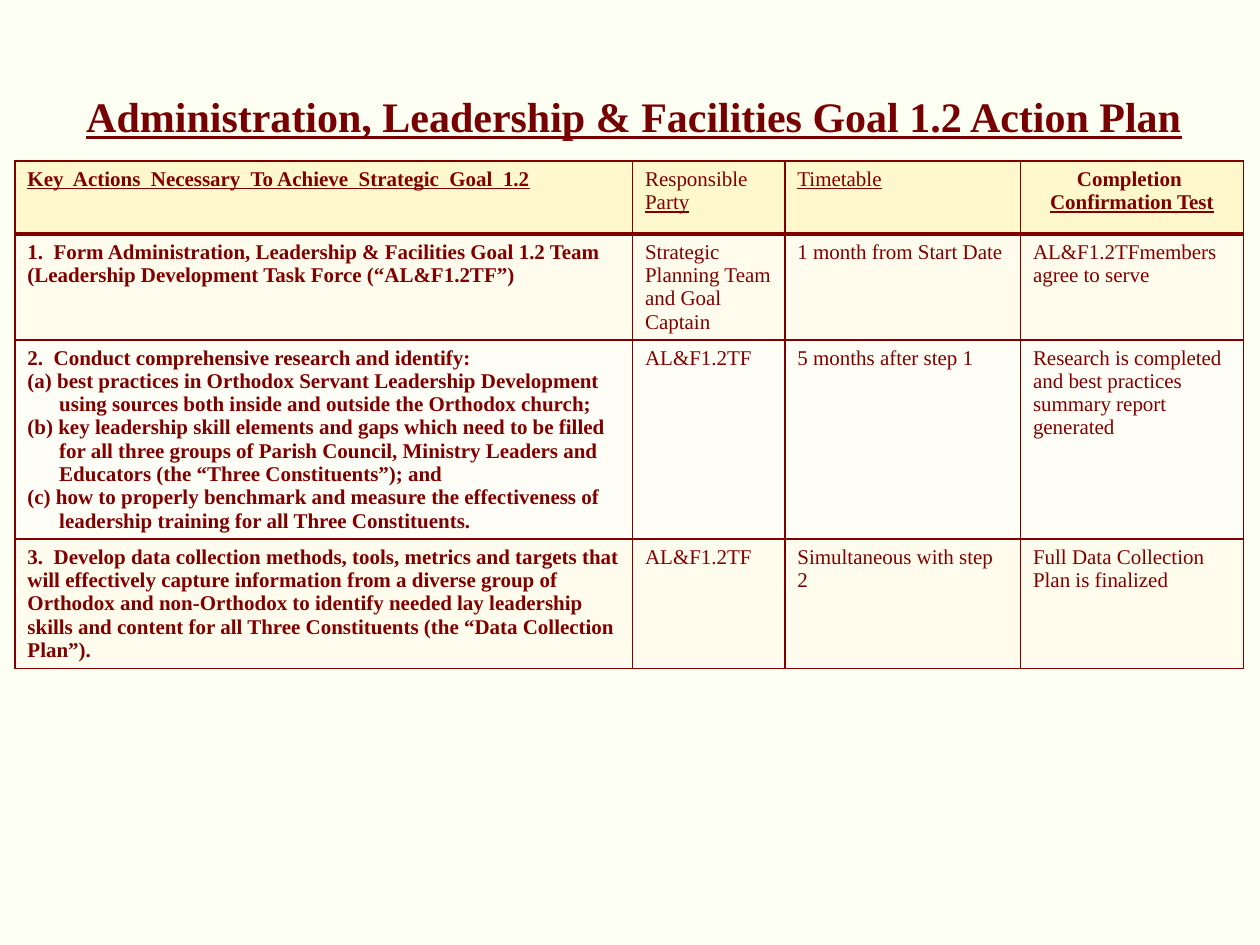
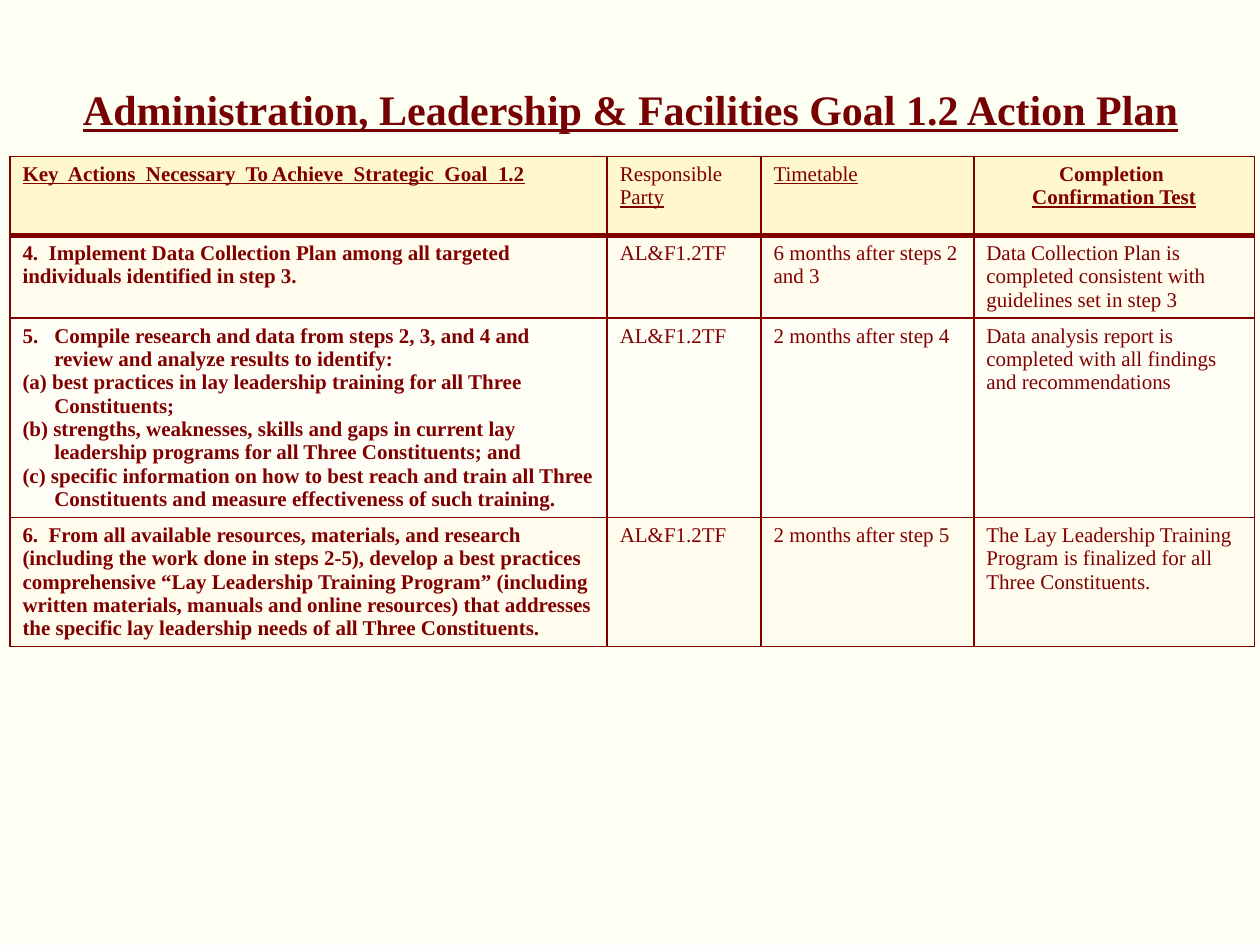
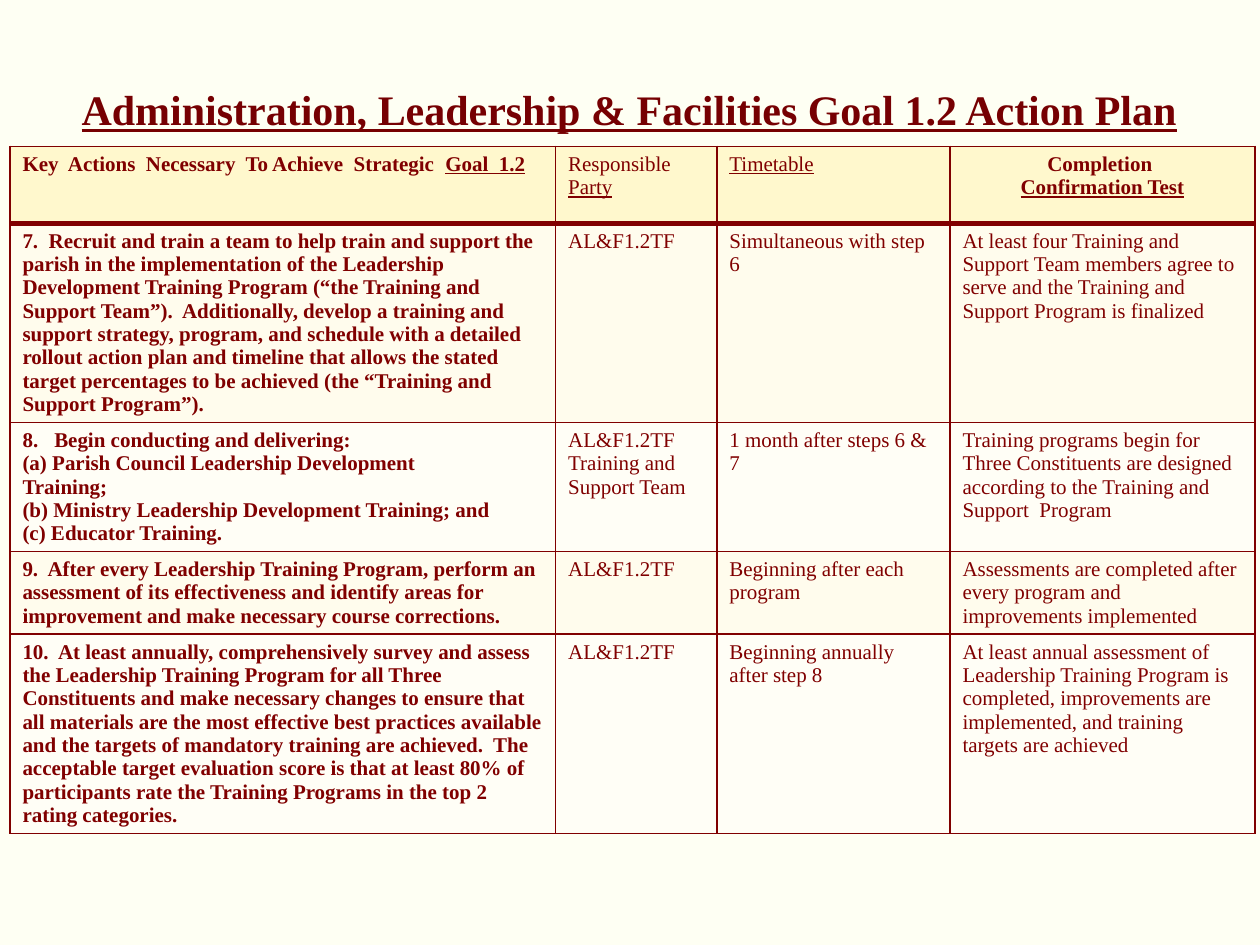
from dataclasses import dataclass

from lxml import etree
from pptx import Presentation
from pptx.dml.color import RGBColor
from pptx.enum import text
from pptx.oxml import ns
from pptx.util import Cm, Pt


@dataclass(frozen=True)
class Theme:
    font: str = "Times New Roman"
    background: str = "FEFFF3"
    title: str = "760002"
    ink: str = "800000"
    header: str = "FFF8CD"
    bands: tuple = ("FFFCED", "FFFEF6")
    title_size: int = 24
    body_size: int = 12
    rule: int = 1
    header_rule: int = 3


@dataclass(frozen=True)
class Para:
    text: str
    hanging: bool = False
    number: int = 0
    tab: bool = False


@dataclass(frozen=True)
class Plan:
    title_box: tuple
    table_at: tuple
    columns: tuple
    header_height: float
    key_header: str
    steps: tuple


THEME = Theme()
TITLE = "Administration, Leadership & Facilities Goal 1.2 Action Plan"
KEY_HEADER = "_Key  Actions  Necessary  To Achieve  Strategic  Goal  1.2_"
SHARED_HEADERS = (
    "Responsible _Party_",
    "_Timetable_",
    (Para("Completion "), Para("_Confirmation Test_")),
)
TEAM = "AL&F1.2TF"
ROW_HEIGHT = 1.45
INDENT = Cm(0.64)

PLANS = (
    Plan(
        (1.07, 1.68, 23.42, 1.57), (0.3, 3.25), (12.45, 3.07, 4.75, 4.5), 1.47, KEY_HEADER,
        (
            ("1.  Form Administration, Leadership & Facilities Goal 1.2 Team (Leadership "
             "Development Task Force (“AL&F1.2TF”)",
             "Strategic Planning Team and Goal Captain",
             "1 month from Start Date",
             "AL&F1.2TFmembers agree to serve"),
            ((Para("2.  Conduct comprehensive research and identify:", hanging=True),
              Para("(a) best practices in Orthodox Servant Leadership Development using sources "
                   "both inside and outside the Orthodox church;", hanging=True),
              Para("(b) key leadership skill elements and gaps which need to be filled for all "
                   "three groups of Parish Council, Ministry Leaders and Educators (the “Three "
                   "Constituents”); and", hanging=True),
              Para("(c) how to properly benchmark and measure the effectiveness of leadership "
                   "training for all Three Constituents.", hanging=True)),
             TEAM,
             "5 months after step 1",
             "Research is completed and best practices summary report generated"),
            ("3.  Develop data collection methods, tools, metrics and targets that will "
             "effectively capture information from a diverse group of Orthodox and non-Orthodox "
             "to identify needed lay leadership skills and content for all Three Constituents "
             "(the “Data Collection Plan”).",
             TEAM,
             "Simultaneous with step 2",
             "Full Data Collection Plan is finalized"),
        ),
    ),
    Plan(
        (1.17, 1.47, 23.09, 1.7), (0.2, 3.15), (12.04, 3.1, 4.29, 5.66), 1.6, KEY_HEADER,
        (
            ("4.  Implement Data Collection Plan among all targeted individuals identified in "
             "step 3.",
             TEAM,
             "6 months after steps 2 and 3",
             "Data Collection Plan is completed consistent with guidelines set in step 3"),
            ((Para("Compile research and data from steps 2, 3, and 4 and review and analyze "
                   "results to identify:", hanging=True, number=5),
              Para("(a) best practices in lay leadership training for all Three Constituents;",
                   hanging=True),
              Para("(b) strengths, weaknesses, skills and gaps in current lay leadership programs "
                   "for all Three Constituents; and", hanging=True),
              Para("(c) specific information on how to best reach and train all Three "
                   "Constituents and measure effectiveness of such training.", hanging=True)),
             TEAM,
             "2 months after step 4",
             "Data analysis report is completed with all findings and recommendations"),
            ("6.  From all available resources, materials, and research (including the work done "
             "in steps 2-5), develop a best practices comprehensive “Lay Leadership Training "
             "Program” (including written materials, manuals and online resources) that "
             "addresses the specific lay leadership needs of all Three Constituents.",
             TEAM,
             "2 months after step 5",
             "The Lay Leadership Training Program is finalized for all Three Constituents."),
        ),
    ),
    Plan(
        (1.14, 1.47, 23.09, 1.7), (0.2, 2.95), (11.0, 3.25, 4.7, 6.15), 1.55,
        "Key  Actions  Necessary  To Achieve  Strategic  _Goal  1.2_",
        (
            ("7.  Recruit and train a team to help train and support the parish in the "
             "implementation of the Leadership Development Training Program (“the Training and "
             "Support Team”).  Additionally, develop a training and support strategy, program, "
             "and schedule with a detailed rollout action plan and timeline that allows the "
             "stated target percentages to be achieved (the “Training and Support Program”).",
             TEAM,
             "Simultaneous with step 6",
             "At least four Training and Support Team members agree to serve and the Training "
             "and Support Program is finalized"),
            ((Para("Begin conducting and delivering:", hanging=True, number=8),
              Para("(a) Parish Council Leadership Development \tTraining;", tab=True),
              Para("(b) Ministry Leadership Development Training; and"),
              Para("(c) Educator Training.")),
             "AL&F1.2TF Training and Support Team",
             "1 month after steps 6 & 7",
             "Training programs begin for Three Constituents are designed according to the "
             "Training and Support  Program"),
            ("9.  After every Leadership Training Program, perform an assessment of its "
             "effectiveness and identify areas for improvement and make necessary course "
             "corrections.",
             TEAM,
             "Beginning after each program",
             "Assessments are completed after every program and improvements implemented"),
            ("10.  At least annually, comprehensively survey and assess the Leadership Training "
             "Program for all Three Constituents and make necessary changes to ensure that all "
             "materials are the most effective best practices available and the targets of "
             "mandatory training are achieved.  The acceptable target evaluation score is that "
             "at least 80% of participants rate the Training Programs in the top 2 rating "
             "categories.",
             TEAM,
             "Beginning annually after step 8",
             "At least annual assessment of Leadership Training Program is completed, "
             "improvements are implemented, and training targets are achieved"),
        ),
    ),
)


def rgb(value):
    return RGBColor.from_string(value)


def add_xml(parent, tag, **attributes):
    values = {name: str(value) for name, value in attributes.items()}
    return etree.SubElement(parent, ns.qn(tag), values)


def format_run(r, size, color, bold, underline):
    r.font.name = THEME.font
    r.font.size = Pt(size)
    r.font.bold = bold
    r.font.underline = underline
    r.font.color.rgb = rgb(color)


def add_title(slide, box):
    sp = slide.shapes.title
    sp.left, sp.top, sp.width, sp.height = map(Cm, box)
    tf = sp.text_frame
    tf.text = TITLE
    tf.word_wrap = True
    tf.auto_size = text.MSO_AUTO_SIZE.NONE
    tf.vertical_anchor = text.MSO_ANCHOR.MIDDLE
    p = tf.paragraphs[0]
    p.alignment = text.PP_ALIGN.CENTER
    p.line_spacing = 0.7
    format_run(p.runs[0], THEME.title_size, THEME.title, True, True)


def set_layout(p, para):
    pPr = p._p.get_or_add_pPr()
    if para.hanging:
        pPr.set("marL", str(INDENT))
        pPr.set("indent", str(-INDENT))
    if para.number:
        add_xml(pPr, "a:buFont", typeface="+mj-lt")
        add_xml(pPr, "a:buAutoNum", type="arabicPeriod", startAt=para.number)
    if para.tab:
        add_xml(add_xml(pPr, "a:tabLst"), "a:tab", pos=INDENT, algn="l")


def write_cell(cell, content, bold, centred):
    paras = (Para(content),) if isinstance(content, str) else content
    tf = cell.text_frame
    for i, para in enumerate(paras):
        p = tf.add_paragraph() if i else tf.paragraphs[0]
        set_layout(p, para)
        if centred:
            p.alignment = text.PP_ALIGN.CENTER
        for j, part in enumerate(para.text.split("_")):
            if part:
                r = p.add_run()
                r.text = part
                format_run(r, THEME.body_size, THEME.ink, bold, j % 2 == 1)


def style_cell(cell, fill, bottom):
    tcPr = cell._tc.get_or_add_tcPr()
    for side in "LRTB":
        width = bottom if side == "B" else THEME.rule
        ln = add_xml(tcPr, f"a:ln{side}", w=Pt(width))
        add_xml(add_xml(ln, "a:solidFill"), "a:srgbClr", val=THEME.ink)
    cell.fill.solid()
    cell.fill.fore_color.rgb = rgb(fill)


def add_plan_table(slide, plan):
    rows = ((plan.key_header, *SHARED_HEADERS), *plan.steps)
    heights = [plan.header_height] + [ROW_HEIGHT] * len(plan.steps)
    left, top = plan.table_at
    table = slide.shapes.add_table(
        len(rows), len(plan.columns), Cm(left), Cm(top),
        Cm(sum(plan.columns)), Cm(sum(heights))).table
    table.horz_banding = False
    table.first_row = False
    for column, width in zip(table.columns, plan.columns):
        column.width = Cm(width)
    for i, (height, contents) in enumerate(zip(heights, rows)):
        table.rows[i].height = Cm(height)
        is_header = i == 0
        fill = THEME.header if is_header else THEME.bands[(i - 1) % 2]
        bottom = THEME.header_rule if is_header else THEME.rule
        for j, content in enumerate(contents):
            cell = table.cell(i, j)
            centred = is_header and j == 3
            style_cell(cell, fill, bottom)
            write_cell(cell, content, j == 0 or centred, centred)


def main():
    prs = Presentation()
    prs.slide_width, prs.slide_height = Cm(25.4), Cm(19.05)
    background = prs.slide_master.background.fill
    background.solid()
    background.fore_color.rgb = rgb(THEME.background)
    for plan in PLANS:
        slide = prs.slides.add_slide(prs.slide_layouts[5])
        add_title(slide, plan.title_box)
        add_plan_table(slide, plan)
    prs.save("out.pptx")


if __name__ == "__main__":
    main()
